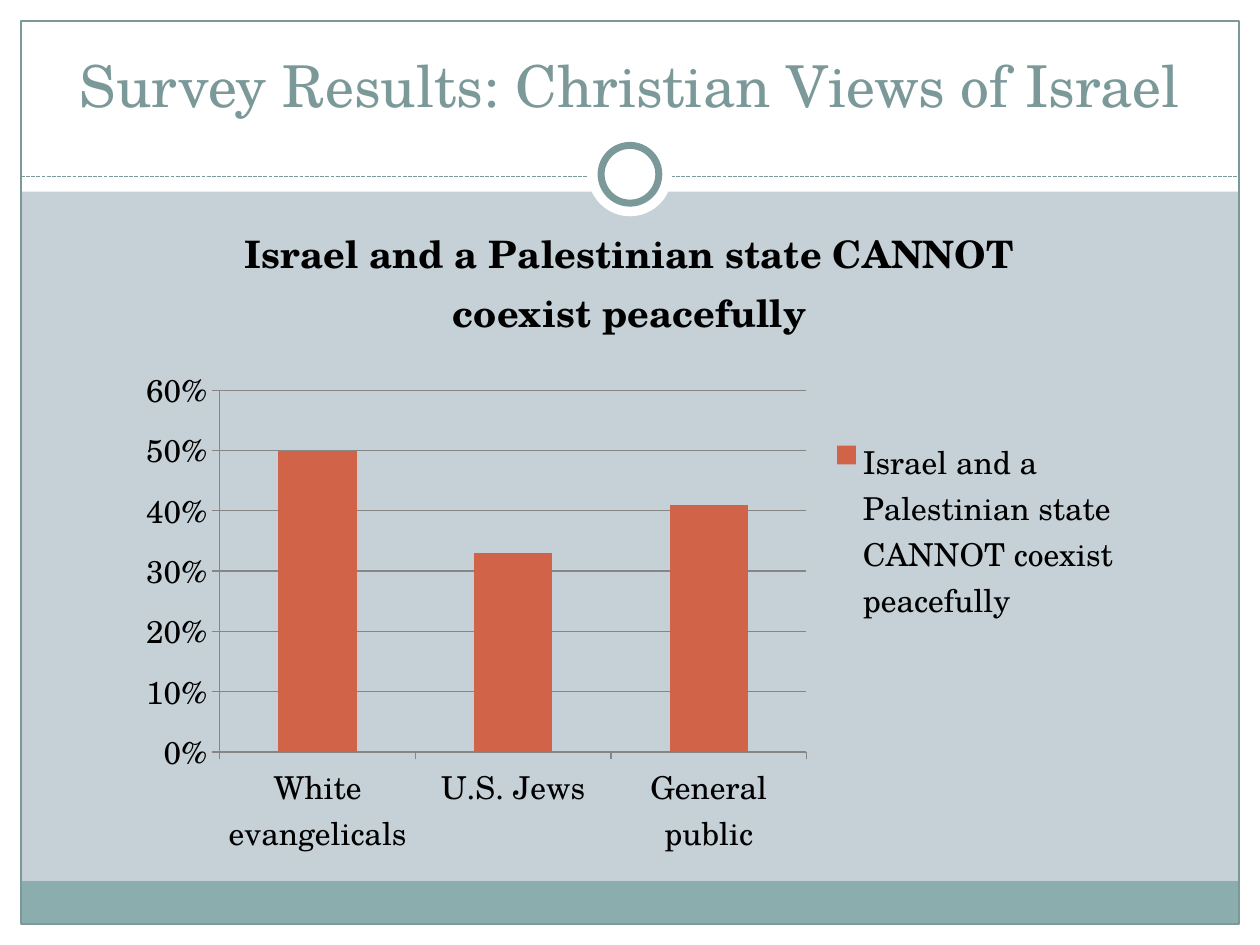
from lxml.etree import SubElement
from pptx import Presentation
from pptx.chart.data import CategoryChartData
from pptx.dml.color import RGBColor
from pptx.enum.chart import XL_CHART_TYPE, XL_LEGEND_POSITION, XL_TICK_MARK
from pptx.enum.dml import MSO_LINE
from pptx.enum.shapes import MSO_CONNECTOR, MSO_SHAPE
from pptx.enum.text import MSO_ANCHOR, PP_ALIGN
from pptx.oxml.ns import qn
from pptx.util import Pt

WIDTH, HEIGHT = 720, 540
MARGIN = 12
HEADER_H = 109.5
FOOTER_H = 24.5
RULE_Y = 101
FONT = "TeX Gyre Schola"
WHITE = RGBColor(0xFF, 0xFF, 0xFF)
BLACK = RGBColor(0x00, 0x00, 0x00)
BACKGROUND = RGBColor(0xC5, 0xD1, 0xD7)
FOOTER = RGBColor(0x8C, 0xAD, 0xAE)
TEAL = RGBColor(0x7C, 0x99, 0x9A)
GRID = RGBColor(0x86, 0x86, 0x86)
BAR = RGBColor(0xD1, 0x63, 0x49)

STATEMENT = "Israel and a Palestinian state CANNOT coexist peacefully"
RESULTS = {"White evangelicals": 0.5, "U.S. Jews": 0.33, "General public": 0.41}


def add_shape(s, kind, x, y, w, h, fill=None, line=None, line_w=0.75):
    sp = s.shapes.add_shape(kind, Pt(x), Pt(y), Pt(w), Pt(h))
    sp.shadow.inherit = False
    if fill is None:
        sp.fill.background()
    else:
        sp.fill.solid()
        sp.fill.fore_color.rgb = fill
    if line is None:
        sp.line.fill.background()
    else:
        sp.line.color.rgb = line
        sp.line.width = Pt(line_w)
    return sp


def add_frame(s, x, y, w, h):
    """White page edges and header, footer band and thin outline around the inner box."""
    right, bottom = x + w, y + h
    edges = [
        (0, bottom, WIDTH, HEIGHT - bottom),
        (0, 0, WIDTH, HEADER_H),
        (0, 0, x, HEIGHT),
        (right, 0, WIDTH - right, HEIGHT),
    ]
    for edge in edges:
        add_shape(s, MSO_SHAPE.RECTANGLE, *edge, fill=WHITE)
    add_shape(s, MSO_SHAPE.RECTANGLE, x, bottom - FOOTER_H, w, FOOTER_H, fill=FOOTER)
    add_shape(s, MSO_SHAPE.RECTANGLE, x, y, w, h, line=TEAL)


def add_divider(s, x, y, w):
    """Dashed rule with a ring at its middle."""
    rule = s.shapes.add_connector(MSO_CONNECTOR.STRAIGHT, Pt(x), Pt(y), Pt(x + w), Pt(y))
    rule.line.color.rgb = TEAL
    rule.line.width = Pt(0.75)
    rule.line.dash_style = MSO_LINE.SQUARE_DOT
    sp_pr = rule.line._get_or_add_ln().getparent()
    SubElement(sp_pr, qn("a:effectLst"))
    mid_x, mid_y = x + w / 2, y - 1.4
    for size, line in ((48, None), (33, TEAL)):
        add_shape(s, MSO_SHAPE.OVAL, mid_x - size / 2, mid_y - size / 2, size, size,
                  fill=WHITE, line=line, line_w=4)


def style_font(font, size, color, bold=False):
    font.name = FONT
    font.size = Pt(size)
    font.bold = bold
    font.color.rgb = color


def add_title(s, x, y, w, h, text):
    tf = s.shapes.add_textbox(Pt(x), Pt(y), Pt(w), Pt(h)).text_frame
    tf.word_wrap = True
    tf.vertical_anchor = MSO_ANCHOR.MIDDLE
    p = tf.paragraphs[0]
    p.alignment = PP_ALIGN.CENTER
    r = p.add_run()
    r.text = text
    style_font(r.font, 33, TEAL)


def add_results_chart(s, x, y, w, h):
    data = CategoryChartData(number_format="0%")
    data.categories = list(RESULTS)
    data.add_series(STATEMENT, list(RESULTS.values()))
    chart = s.shapes.add_chart(XL_CHART_TYPE.COLUMN_CLUSTERED,
                               Pt(x), Pt(y), Pt(w), Pt(h), data).chart
    style_font(chart.font, 18, BLACK)

    chart.has_title = True
    r = chart.chart_title.text_frame.paragraphs[0].add_run()
    r.text = STATEMENT
    style_font(r.font, 21.6, BLACK, bold=True)
    chart.chart_title.include_in_layout = False

    chart.has_legend = True
    chart.legend.position = XL_LEGEND_POSITION.RIGHT
    chart.legend.include_in_layout = False

    for axis in (chart.category_axis, chart.value_axis):
        axis.major_tick_mark = XL_TICK_MARK.OUTSIDE
        axis.format.line.color.rgb = GRID
    values = chart.value_axis
    values.minimum_scale, values.maximum_scale, values.major_unit = 0, 0.6, 0.1
    values.tick_labels.number_format = "0%"
    values.tick_labels.number_format_is_linked = False
    values.has_major_gridlines = True
    values.major_gridlines.format.line.color.rgb = GRID

    plot = chart.plots[0]
    plot.gap_width = 150
    plot.vary_by_categories = False
    fill = plot.series[0].format.fill
    fill.solid()
    fill.fore_color.rgb = BAR


def main():
    prs = Presentation()
    prs.slide_width, prs.slide_height = Pt(WIDTH), Pt(HEIGHT)
    s = prs.slides.add_slide(prs.slide_layouts[6])
    s.background.fill.solid()
    s.background.fill.fore_color.rgb = BACKGROUND

    inner_w = WIDTH - 2 * MARGIN
    add_frame(s, MARGIN, MARGIN, inner_w, HEIGHT - 2 * MARGIN)
    add_divider(s, MARGIN, RULE_Y, inner_w)
    add_title(s, 24, 18, WIDTH - 48, 60, "Survey Results: Christian Views of Israel")
    add_results_chart(s, 72, 110, WIDTH - 144, 387)
    prs.save("out.pptx")


if __name__ == "__main__":
    main()
